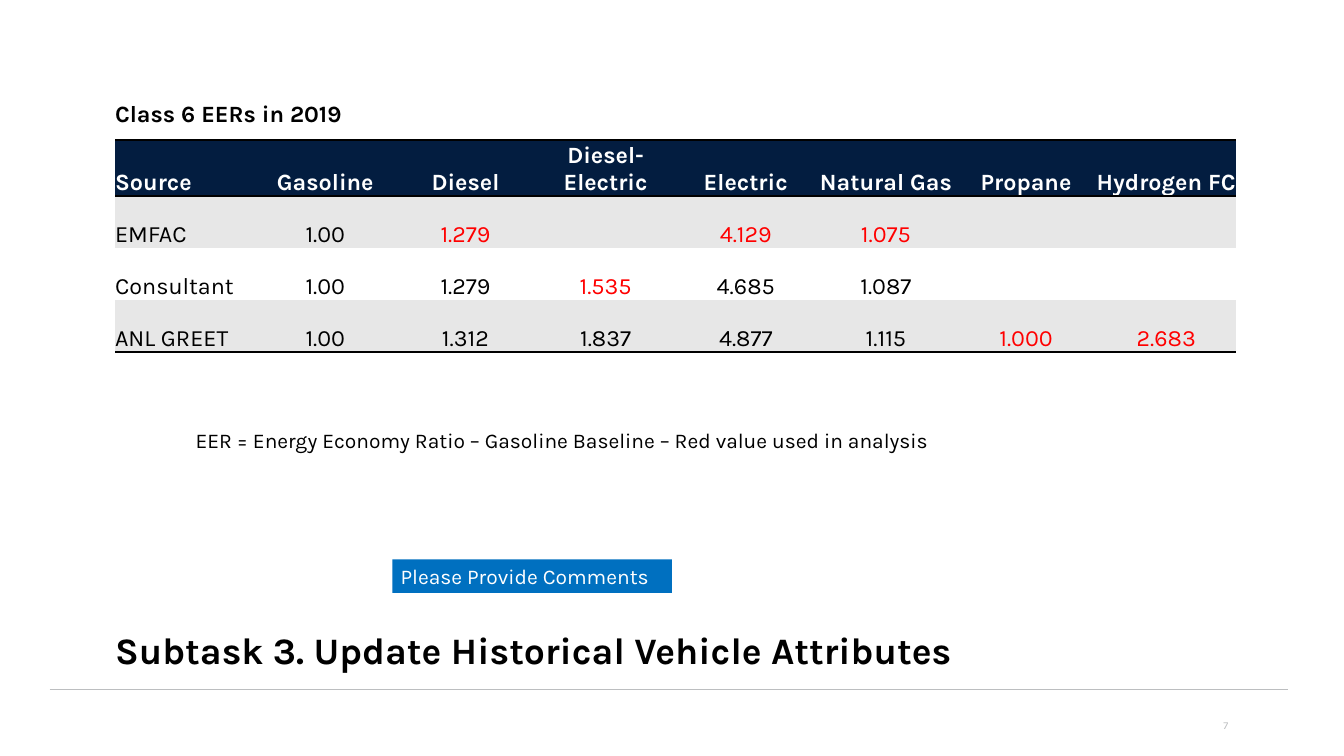
from lxml import etree
from pptx import Presentation
from pptx.dml.color import RGBColor
from pptx.enum import shapes, text
from pptx.oxml import ns
from pptx.util import Pt

COLORS = {
    "black": "000000", "white": "FFFFFF", "navy": "031D40", "band": "E7E7E7",
    "red": "FF0000", "blue": "0070C0", "gray": "BCBEC0",
}
FONT = "Karla"
NO_TABLE_STYLE = "{2D5ABB26-0587-4C30-8999-92F81FD0307C}"
HEADERS = ["Source", "Gasoline", "Diesel", "Diesel-Electric", "Electric",
           "Natural Gas", "Propane", "Hydrogen FC"]
RATIOS = [
    ["EMFAC", "1.00", "1.279", "", "4.129", "1.075", "", ""],
    ["Consultant", "1.00", "1.279", "1.535", "4.685", "1.087", "", ""],
    ["ANL GREET", "1.00", "1.312", "1.837", "4.877", "1.115", "1.000", "2.683"],
]
USED_IN_ANALYSIS = {(1, 2), (1, 4), (1, 5), (2, 3), (3, 6), (3, 7)}


def rgb(name):
    """Return the named colour."""
    return RGBColor.from_string(COLORS[name])


def write(frame, words, size=18, color="black", bold=False, align="LEFT", spacing=1.0):
    """Put one formatted paragraph into a text frame."""
    paragraph = frame.paragraphs[0]
    paragraph.alignment = getattr(text.PP_ALIGN, align)
    paragraph.line_spacing = spacing
    run = paragraph.add_run()
    run.text = words
    run.font.name = FONT
    run.font.size = Pt(size)
    run.font.bold = bold
    run.font.color.rgb = rgb(color)


def add_text(slide, words, left, top, width, height, inset=7.2, anchor="TOP", **style):
    """Add a wrapping text box."""
    frame = slide.shapes.add_textbox(Pt(left), Pt(top), Pt(width), Pt(height)).text_frame
    frame.word_wrap = True
    frame.margin_left = frame.margin_right = Pt(inset)
    frame.vertical_anchor = getattr(text.MSO_ANCHOR, anchor)
    write(frame, words, **style)


def add_rule(slide, left, right, top):
    """Add a thin horizontal line."""
    rule = slide.shapes.add_connector(
        shapes.MSO_CONNECTOR.STRAIGHT, Pt(left), Pt(top), Pt(right), Pt(top))
    rule.line.color.rgb = rgb("gray")
    rule.line.width = Pt(0.5)
    etree.SubElement(rule._element.spPr, ns.qn("a:effectLst"))


def add_button(slide, words, left, top, width, height):
    """Add a filled rectangle with a label."""
    button = slide.shapes.add_shape(
        shapes.MSO_SHAPE.RECTANGLE, Pt(left), Pt(top), Pt(width), Pt(height))
    button.shadow.inherit = False
    button.fill.solid()
    button.fill.fore_color.rgb = rgb("blue")
    button.line.fill.background()
    button.text_frame.vertical_anchor = text.MSO_ANCHOR.TOP
    write(button.text_frame, words, color="white")


def add_border(cell, side):
    """Draw a black border on one side of a cell."""
    line = etree.SubElement(cell._tc.get_or_add_tcPr(), ns.qn(f"a:ln{side}"), w=str(Pt(2)))
    fill = etree.SubElement(line, ns.qn("a:solidFill"))
    etree.SubElement(fill, ns.qn("a:srgbClr"), val=COLORS["black"])


def fill_cell(cell, words, fill, sides, **style):
    """Set the borders, fill and text of a cell."""
    for side in sides:
        add_border(cell, side)
    cell.fill.solid()
    cell.fill.fore_color.rgb = rgb(fill)
    cell.margin_left = cell.margin_right = cell.margin_top = cell.margin_bottom = 0
    cell.vertical_anchor = text.MSO_ANCHOR.BOTTOM
    if words:
        write(cell.text_frame, words, size=20, **style)


def add_ratio_table(slide, left, top, width, height):
    """Add the table of energy economy ratios."""
    rows = [HEADERS] + RATIOS
    table = slide.shapes.add_table(
        len(rows), len(HEADERS), Pt(left), Pt(top), Pt(width), Pt(height)).table
    table._tbl.tblPr.find(ns.qn("a:tableStyleId")).text = NO_TABLE_STYLE
    for column in table.columns:
        column.width = Pt(width / len(HEADERS))
    for row in table.rows:
        row.height = Pt(height / len(rows))
    for i, row in enumerate(rows):
        header = i == 0
        fill = "navy" if header else "band" if i % 2 else "white"
        sides = "TB" if header else "B" if i == len(rows) - 1 else ""
        for j, words in enumerate(row):
            color = "white" if header else "red" if (i, j) in USED_IN_ANALYSIS else "black"
            fill_cell(table.cell(i, j), words, fill, sides, color=color,
                      bold=header, align="CENTER" if j else "LEFT")


def main():
    """Build the slide and save it."""
    presentation = Presentation()
    presentation.slide_width, presentation.slide_height = Pt(1152), Pt(648)
    slide = presentation.slides.add_slide(presentation.slide_layouts[6])
    add_rule(slide, 42.5, 1103.75, 590.4)
    add_text(slide, "Subtask 3. Update Historical Vehicle Attributes", 98.64, 502.56, 990, 77.76,
             inset=0, anchor="BOTTOM", size=32, bold=True, spacing=0.9)
    add_text(slide, "7", 832.3, 604.1, 227.5, 34.56,
             anchor="MIDDLE", size=9, color="gray", align="RIGHT")
    add_text(slide, "Class 6 EERs in 2019", 98.64, 79.2, 990, 36,
             inset=0, size=20, bold=True, spacing=1.1)
    add_ratio_table(slide, 98.64, 120.2, 961.2, 178.56)
    add_text(slide, "EER = Energy Economy Ratio – Gasoline Baseline – Red value used in analysis",
             160.56, 362.9, 843.1, 28.8)
    add_button(slide, "Please Provide Comments", 336.25, 479.5, 239.75, 28.8)
    presentation.save("out.pptx")


if __name__ == "__main__":
    main()
